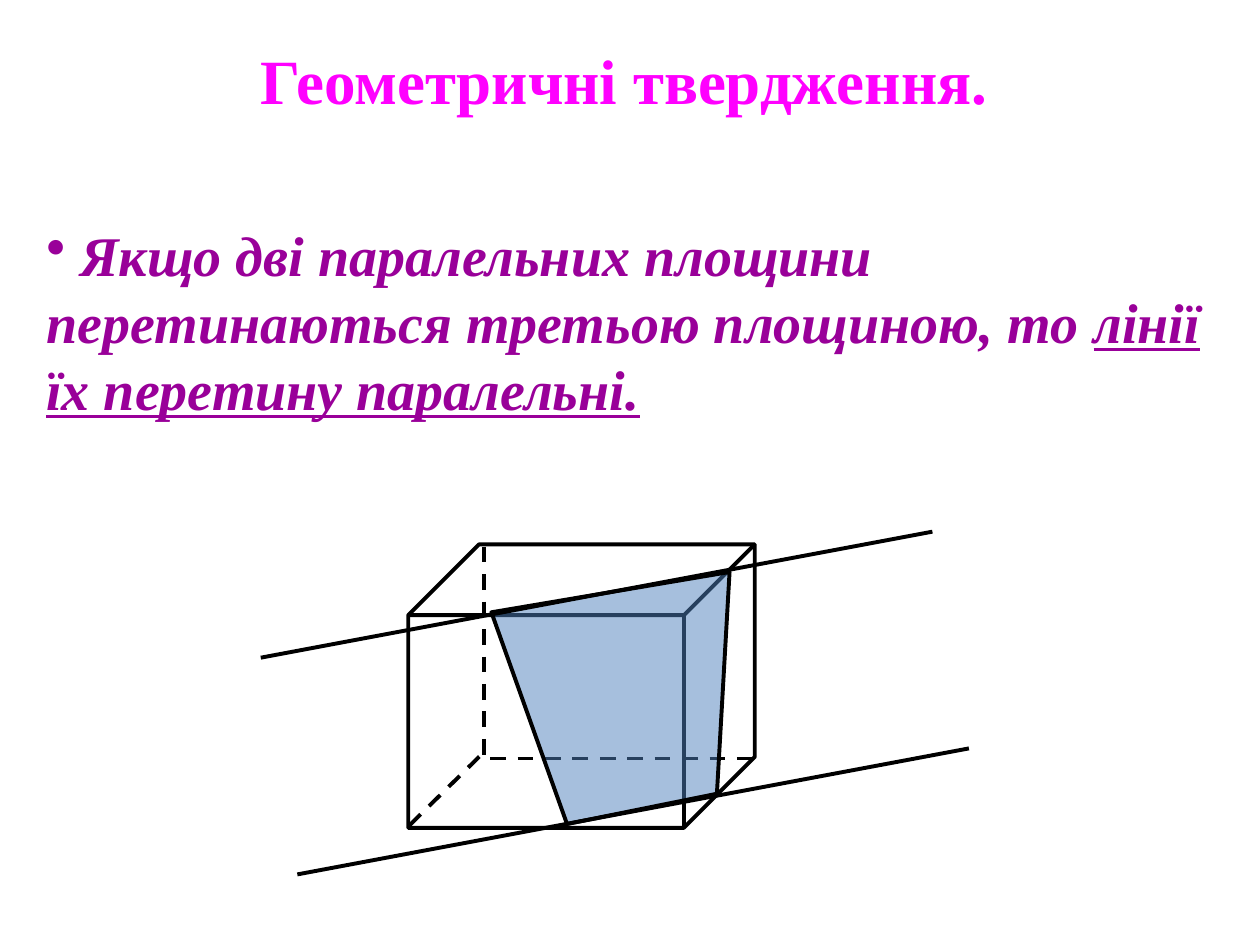
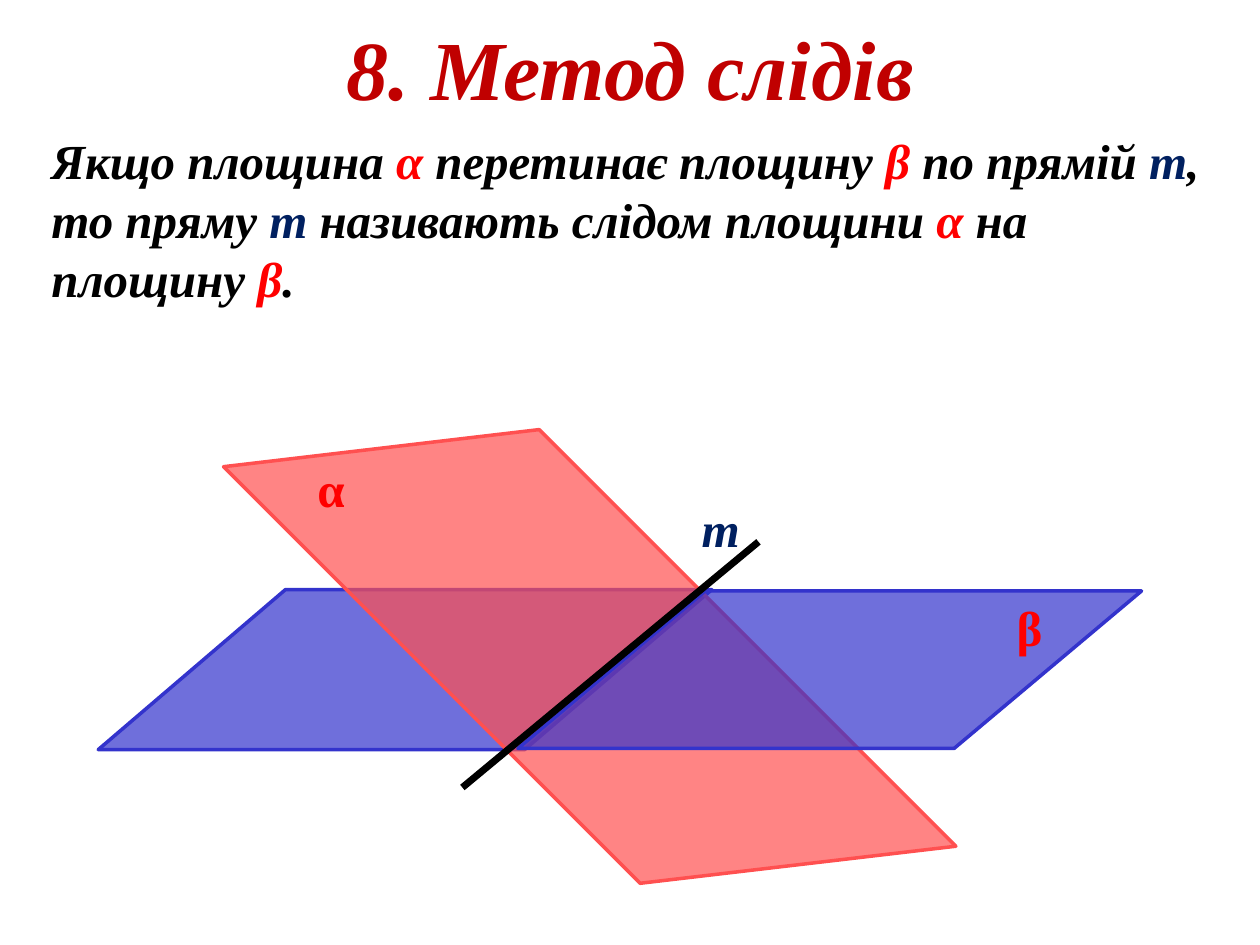
from lxml import etree
from pptx import Presentation
from pptx.dml.color import RGBColor
from pptx.enum.dml import MSO_LINE
from pptx.enum.shapes import MSO_CONNECTOR, MSO_SHAPE
from pptx.enum.text import PP_ALIGN
from pptx.oxml.ns import qn
from pptx.util import Inches, Pt

STRAIGHT = MSO_CONNECTOR.STRAIGHT
CUBE = MSO_SHAPE.CUBE
PARALLELOGRAM = MSO_SHAPE.PARALLELOGRAM
DASH = MSO_LINE.DASH
LEFT, CENTER = PP_ALIGN.LEFT, PP_ALIGN.CENTER

COLUMNS, ROWS = 100, 75
WIDTH, HEIGHT = Inches(10), Inches(7.5)
FONT = "Times New Roman"
BLACK, RED, NAVY = "000000", "FF0000", "002060"
MAGENTA, PURPLE, CRIMSON = "FF00FF", "990099", "C00000"
STEEL, BLUE, CORAL = "4F81BD", "3333CC", "FF5050"


def color(value):
    """Turn a hex string into a colour."""
    return RGBColor.from_string(value)


class Sketch:
    """Hold the deck, its style and the current page."""

    def __init__(self):
        """Open an empty deck of the right size."""
        self.deck = Presentation()
        self.deck.slide_width, self.deck.slide_height = WIDTH, HEIGHT
        self.page = None

    def new_page(self):
        """Start a blank page."""
        self.page = self.deck.slides.add_slide(self.deck.slide_layouts[6])

    def grid(self, column, row):
        """Convert grid columns and rows to lengths."""
        return round(WIDTH * column / COLUMNS), round(HEIGHT * row / ROWS)

    def paint(self, shape, fill, alpha, line, weight):
        """Give a shape its fill, opacity and outline."""
        shape.shadow.inherit = False
        shape.line.color.rgb = color(line)
        shape.line.width = Pt(weight)
        if fill is None:
            shape.fill.background()
            return
        shape.fill.solid()
        shape.fill.fore_color.rgb = color(fill)
        tone = shape.fill._xPr.find(qn("a:solidFill"))[0]
        etree.SubElement(tone, qn("a:alpha")).set("val", str(alpha * 1000))

    def solid(self, kind, at, size, adjust, fill=None, alpha=100,
              line=BLACK, weight=2.25, turn=0):
        """Draw a preset shape."""
        shape = self.page.shapes.add_shape(kind, *self.grid(*at), *self.grid(*size))
        shape.adjustments[0] = adjust
        shape.rotation = turn
        self.paint(shape, fill, alpha, line, weight)

    def polygon(self, corners, fill, alpha, line=BLACK, weight=2.25):
        """Draw a closed outline through the corners."""
        points = [self.grid(*corner) for corner in corners]
        builder = self.page.shapes.build_freeform(*points[0])
        builder.add_line_segments(points[1:], close=True)
        self.paint(builder.convert_to_shape(), fill, alpha, line, weight)

    def line(self, start, end, weight=2.25, dash=None):
        """Draw a straight black line."""
        line = self.page.shapes.add_connector(
            STRAIGHT, *self.grid(*start), *self.grid(*end))
        line.line.color.rgb = color(BLACK)
        line.line.width = Pt(weight)
        if dash:
            line.line.dash_style = dash
        etree.SubElement(line._element.spPr, qn("a:effectLst"))

    def text(self, at, size, spans, points, align=LEFT, italic=True,
             wrap=True, bullet=None):
        """Write spans of (text, colour, underlined) as one paragraph."""
        box = self.page.shapes.add_textbox(*self.grid(*at), *self.grid(*size))
        box.text_frame.word_wrap = wrap
        para = box.text_frame.paragraphs[0]
        para.alignment = align
        if bullet:
            mark = etree.SubElement(para._p.get_or_add_pPr(), qn("a:buChar"))
            mark.set("char", bullet)
        for words, tint, *underline in spans:
            span = para.add_run()
            span.text = words
            span.font.name, span.font.size = FONT, Pt(points)
            span.font.bold, span.font.italic = True, italic
            span.font.underline = bool(underline)
            span.font.color.rgb = color(tint)

    def title(self, at, size, words, tint, points, italic):
        """Write a centred heading."""
        self.text(at, size, [(words, tint)], points, CENTER, italic)

    def label(self, at, letter, tint, italic=False):
        """Name a plane or a line with one letter."""
        self.text(at, (5, 5.7), [(letter, tint)], 28, LEFT, italic, wrap=False)


def parallel_lines(sketch):
    """Show a cube cut by a plane along parallel lines."""
    sketch.new_page()
    sketch.solid(CUBE, (32.4, 43.2), (27.5, 22.5), 0.25)
    for start, end in (((38.4, 43.4), (38.4, 60)),
                       ((38.9, 60.2), (59.7, 60.2)),
                       ((32.5, 65.5), (38.4, 59.7))):
        sketch.line(start, end, dash=DASH)
    sketch.polygon([(39, 48.6), (57.9, 45.4), (56.9, 63), (45, 65.4)], STEEL, 50)
    for column, row in ((20.7, 52.2), (23.6, 69.4)):
        sketch.line((column, row), (column + 53.3, row - 10))
    sketch.title((2.7, 2.8), (93.7, 11), "Геометричні твердження.", MAGENTA, 36, False)
    sketch.text((2.7, 17), (94.5, 17), [
        (" Якщо дві паралельних площини перетинаються третьою площиною, то ", PURPLE),
        ("лінії їх перетину паралельні.", PURPLE, True)], 32, bullet="•")


def trace_method(sketch):
    """Show two planes meeting along their trace."""
    sketch.new_page()
    sketch.title((4.7, 0.8), (90.6, 9.1), "8. Метод слідів", CRIMSON, 48, True)
    for at, size, adjust, tint, turn in (
            ((7.8, 46.8), (48.7, 12.7), 1.17, BLUE, 0),
            ((15.6, 42.2), (62.4, 19.8), 0.79, CORAL, 45),
            ((41.1, 46.9), (49.5, 12.5), 1.19, BLUE, 0)):
        sketch.solid(PARALLELOGRAM, at, size, adjust, tint, 70, tint, 2, turn)
    sketch.text((3.1, 9.9), (93.8, 15.2), [
        ("Якщо площина ", BLACK), ("α", RED),
        (" перетинає площину ", BLACK), ("β", RED),
        (" по прямій ", BLACK), ("т", NAVY),
        (", то пряму ", BLACK), ("т", NAVY),
        (" називають слідом площини ", BLACK), ("α", RED),
        (" на площину ", BLACK), ("β", RED), (".", BLACK)], 28)
    sketch.label((24.2, 35.9), "α", RED)
    sketch.label((79.7, 46.9), "β", RED)
    sketch.line((36.7, 62.5), (60.2, 43), weight=4)
    sketch.label((54.7, 39.1), "т", NAVY, italic=True)


def main():
    """Build both pages and save the deck."""
    sketch = Sketch()
    parallel_lines(sketch)
    trace_method(sketch)
    sketch.deck.save("out.pptx")


if __name__ == "__main__":
    main()
